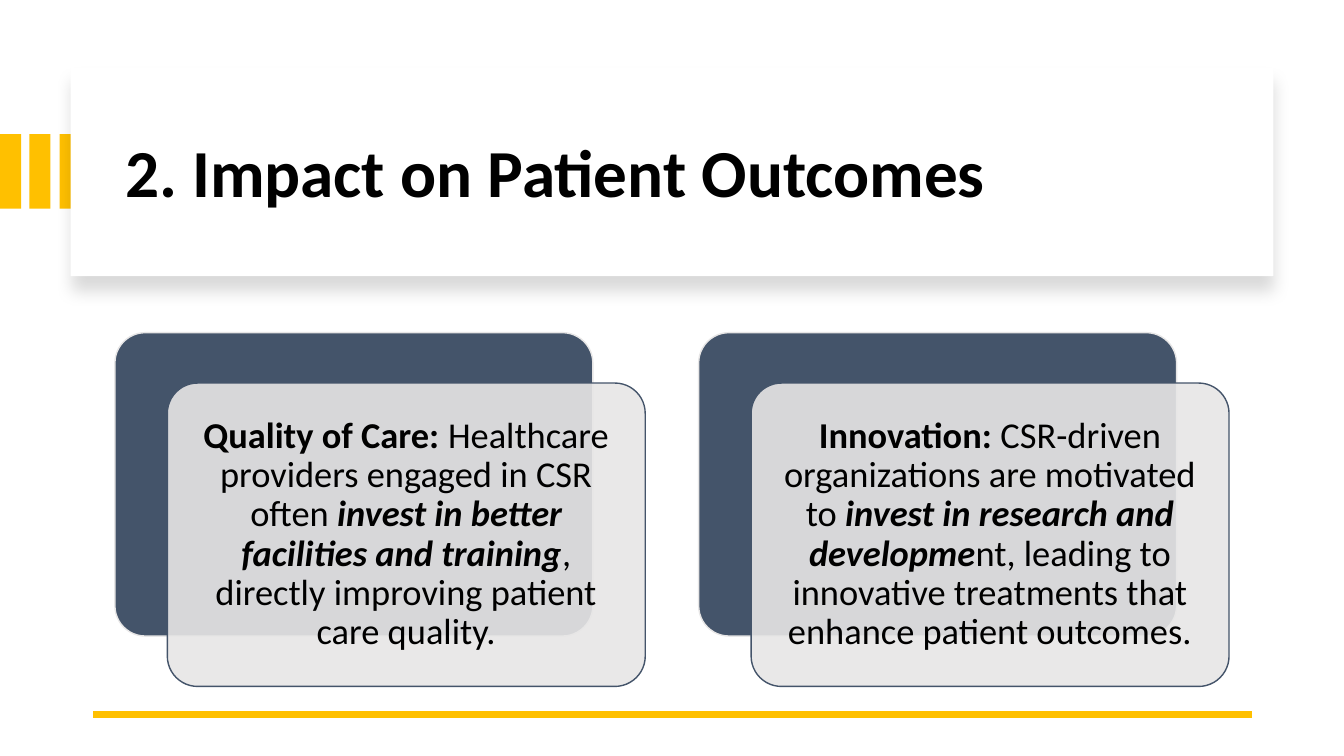
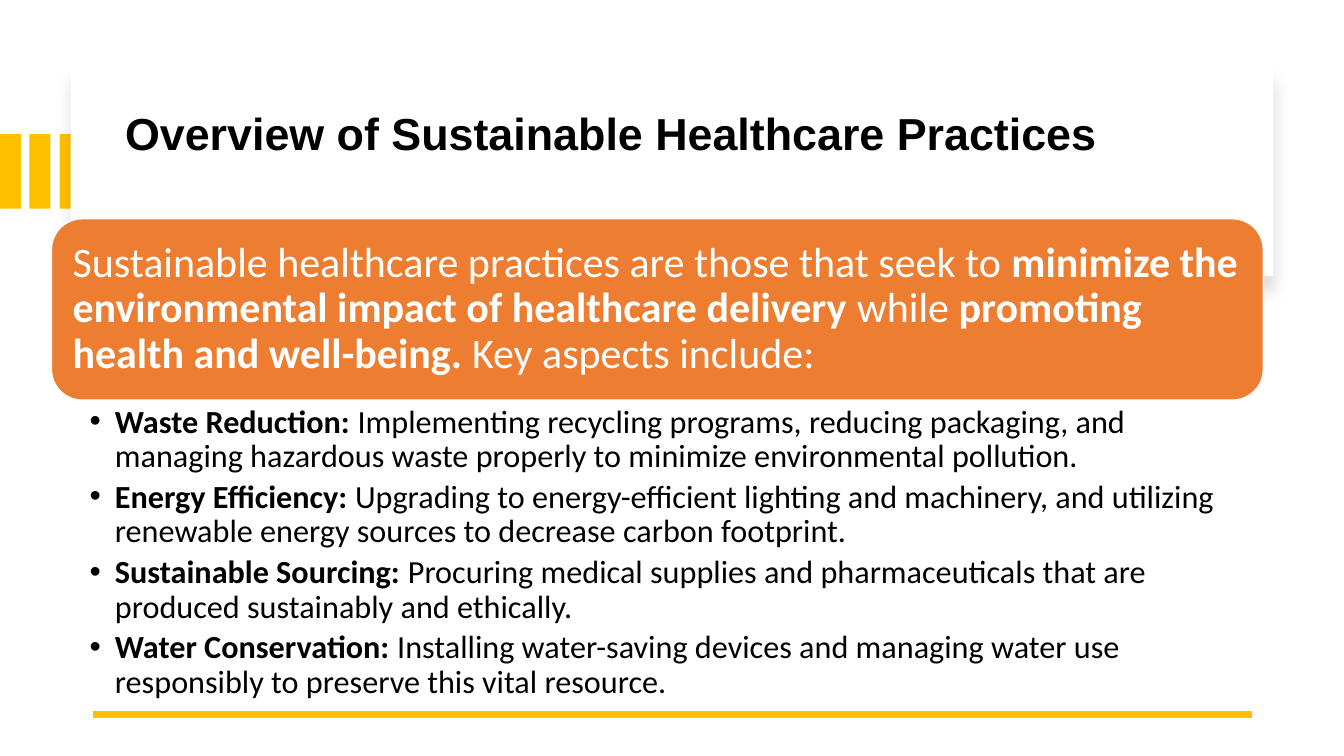
"""Build two slides on responsible healthcare."""
from dataclasses import dataclass

from lxml.etree import SubElement
from pptx import Presentation
from pptx.dml.color import RGBColor
from pptx.enum.shapes import MSO_CONNECTOR, MSO_SHAPE
from pptx.enum.text import MSO_ANCHOR, MSO_AUTO_SIZE, PP_ALIGN
from pptx.oxml.ns import qn
from pptx.presentation import Presentation as Deck
from pptx.shapes.autoshape import Shape
from pptx.slide import Slide
from pptx.text.text import TextFrame
from pptx.util import Emu, Pt

PX = 9144
COLORS = {
    "black": "000000",
    "white": "FFFFFF",
    "gold": "FFC000",
    "navy": "44546A",
    "gray": "E7E6E6",
    "orange": "ED7D31",
}


@dataclass(frozen=True)
class Box:
    """A rectangle in px."""
    left: int
    top: int
    width: int
    height: int

    def emu(self) -> tuple[Emu, Emu, Emu, Emu]:
        """Return the four lengths in EMU."""
        return px(self.left), px(self.top), px(self.width), px(self.height)


@dataclass(frozen=True)
class Span:
    """A piece of text with its emphasis."""
    text: str
    bold: bool = False
    italic: bool = False


@dataclass(frozen=True)
class Card:
    """A pale card over a dark backing plate."""
    left: int
    spans: tuple[Span, ...]


@dataclass(frozen=True)
class Aspect:
    """A bullet with a bold lead-in."""
    name: str
    detail: str


BAR_LEFTS = (0, 29, 59)
TITLE_PANEL = Box(70, 67, 1193, 207)
CARD_TOP, CARD_WIDTH, CARD_HEIGHT = 330, 474, 301
CARD_SHIFT_X, CARD_SHIFT_Y = 52, 50

CARDS = (
    Card(114, (
        Span("Quality of Care: ", bold=True),
        Span("Healthcare providers engaged in CSR often "),
        Span("invest in better facilities and training", bold=True, italic=True),
        Span(", directly improving patient care quality."),
    )),
    Card(693, (
        Span("Innovation: ", bold=True),
        Span("CSR-driven organizations are motivated to "),
        Span("invest in research and developme", bold=True, italic=True),
        Span("nt, leading to innovative treatments that enhance patient outcomes."),
    )),
)
INTRO = (
    Span("Sustainable healthcare practices are those that seek to "),
    Span("minimize the environmental impact of healthcare delivery ", bold=True),
    Span("while "),
    Span("promoting health and well-being. ", bold=True),
    Span("Key aspects include:"),
)
ASPECTS = (
    Aspect("Waste Reduction:",
           " Implementing recycling programs, reducing packaging, and managing "
           "hazardous waste properly to minimize environmental pollution."),
    Aspect("Energy Efficiency:",
           " Upgrading to energy-efficient lighting and machinery, and utilizing "
           "renewable energy sources to decrease carbon footprint."),
    Aspect("Sustainable Sourcing:",
           " Procuring medical supplies and pharmaceuticals that are produced "
           "sustainably and ethically."),
    Aspect("Water Conservation:",
           " Installing water-saving devices and managing water use responsibly "
           "to preserve this vital resource."),
)


def px(length: int) -> Emu:
    """Turn px into EMU."""
    return Emu(length * PX)


def color(name: str) -> RGBColor:
    """Look up a named colour."""
    return RGBColor.from_string(COLORS[name])


def write_text(frame: TextFrame, paragraphs: list[tuple[Span, ...]], *, size: int,
               font: str = "Calibri", ink: str = "black",
               align: PP_ALIGN = PP_ALIGN.LEFT, anchor: MSO_ANCHOR = MSO_ANCHOR.MIDDLE,
               insets: tuple[int, int, int, int] = (10, 5, 10, 5),
               space_after: int = 0, bullet_indent: int = 0) -> None:
    """Fill a text frame with formatted paragraphs."""
    frame.word_wrap = True
    frame.auto_size = MSO_AUTO_SIZE.NONE
    frame.vertical_anchor = anchor
    (frame.margin_left, frame.margin_top,
     frame.margin_right, frame.margin_bottom) = map(px, insets)
    for index, spans in enumerate(paragraphs):
        para = frame.add_paragraph() if index else frame.paragraphs[0]
        para.alignment = align
        para.line_spacing = 0.9
        para.space_before = Pt(0)
        para.space_after = Pt(space_after)
        for span in spans:
            run = para.add_run()
            run.text = span.text
            run.font.name = font
            run.font.size = Pt(size)
            run.font.bold = span.bold
            run.font.italic = span.italic
            run.font.color.rgb = color(ink)
        if bullet_indent:
            properties = para._p.get_or_add_pPr()
            properties.set("marL", str(px(bullet_indent)))
            properties.set("indent", str(-px(bullet_indent)))
            SubElement(properties, qn("a:buFont"), typeface="Arial")
            SubElement(properties, qn("a:buChar"), char="•")


def add_block(page: Slide, box: Box, fill: str, *, line: str | None = None,
              rounding: float | None = None, opacity: int = 100) -> Shape:
    """Draw a plain or rounded rectangle."""
    preset = MSO_SHAPE.RECTANGLE if rounding is None else MSO_SHAPE.ROUNDED_RECTANGLE
    block = page.shapes.add_shape(preset, *box.emu())
    block.shadow.inherit = False
    block.fill.solid()
    block.fill.fore_color.rgb = color(fill)
    if rounding is not None:
        block.adjustments[0] = rounding
    if line:
        block.line.color.rgb = color(line)
        block.line.width = Pt(1)
    else:
        block.line.fill.background()
    if opacity < 100:
        paint = block.element.spPr.find(qn("a:solidFill"))[0]
        SubElement(paint, qn("a:alpha"), val=str(opacity * 1000))
    return block


def add_soft_shadow(block: Shape) -> None:
    """Cast a faint shadow straight down."""
    effects = block.element.spPr.find(qn("a:effectLst"))
    shadow = SubElement(effects, qn("a:outerShdw"), blurRad=str(Pt(11)),
                        dist=str(Pt(10)), dir="5400000", algn="t", rotWithShape="0")
    paint = SubElement(shadow, qn("a:srgbClr"), val=COLORS["black"])
    SubElement(paint, qn("a:alpha"), val="15000")


def add_page(deck: Deck, title: str, *, height: int, size: int, font: str) -> Slide:
    """Add a slide with the shared bars, title panel and base line."""
    page = deck.slides.add_slide(deck.slide_layouts[5])
    for left in BAR_LEFTS:
        add_block(page, Box(left, 133, 21, 74), "gold")
    add_soft_shadow(add_block(page, TITLE_PANEL, "white"))

    heading = page.shapes.title
    heading.left, heading.top, heading.width, heading.height = Box(
        114, 89, 1113, height).emu()
    write_text(heading.text_frame, [(Span(title, bold=True),)], size=size, font=font)
    heading.element.getparent().append(heading.element)

    base = page.shapes.add_connector(
        MSO_CONNECTOR.STRAIGHT, px(1242), px(709), px(92), px(709))
    base.line.color.rgb = color("gold")
    base.line.width = Pt(4.5)
    SubElement(base.element.spPr, qn("a:effectLst"))
    return page


def add_card(page: Slide, card: Card) -> None:
    """Draw a backing plate and the text card that overlaps it."""
    plate = Box(card.left, CARD_TOP, CARD_WIDTH, CARD_HEIGHT)
    front = Box(card.left + CARD_SHIFT_X, CARD_TOP + CARD_SHIFT_Y,
                CARD_WIDTH, CARD_HEIGHT)
    add_block(page, plate, "navy", line="gray", rounding=0.1)
    block = add_block(page, front, "gray", line="navy", rounding=0.1, opacity=90)
    write_text(block.text_frame, [card.spans], size=26, align=PP_ALIGN.CENTER,
               insets=(11, 11, 11, 11))


def build_outcomes(deck: Deck) -> None:
    """Build the slide on patient outcomes."""
    page = add_page(deck, "2. Impact on Patient Outcomes",
                    height=170, size=48, font="Calibri")
    for card in CARDS:
        add_card(page, card)


def build_practices(deck: Deck) -> None:
    """Build the slide on sustainable practices."""
    page = add_page(deck, "Overview of Sustainable Healthcare Practices",
                    height=92, size=32, font="Arial")
    banner = add_block(page, Box(51, 217, 1202, 180), "orange",
                       line="white", rounding=0.17)
    write_text(banner.text_frame, [INTRO], size=30, ink="white",
               insets=(12, 12, 12, 12))
    listing = page.shapes.add_textbox(*Box(51, 398, 1202, 319).emu())
    write_text(listing.text_frame,
               [(Span(aspect.name, bold=True), Span(aspect.detail)) for aspect in ASPECTS],
               size=23, anchor=MSO_ANCHOR.TOP, insets=(38, 4, 23, 4),
               space_after=4, bullet_indent=25)


def main() -> None:
    """Build and save the deck."""
    deck = Presentation()
    deck.slide_width, deck.slide_height = px(1333), px(750)
    build_outcomes(deck)
    build_practices(deck)
    deck.save("out.pptx")


if __name__ == "__main__":
    main()
